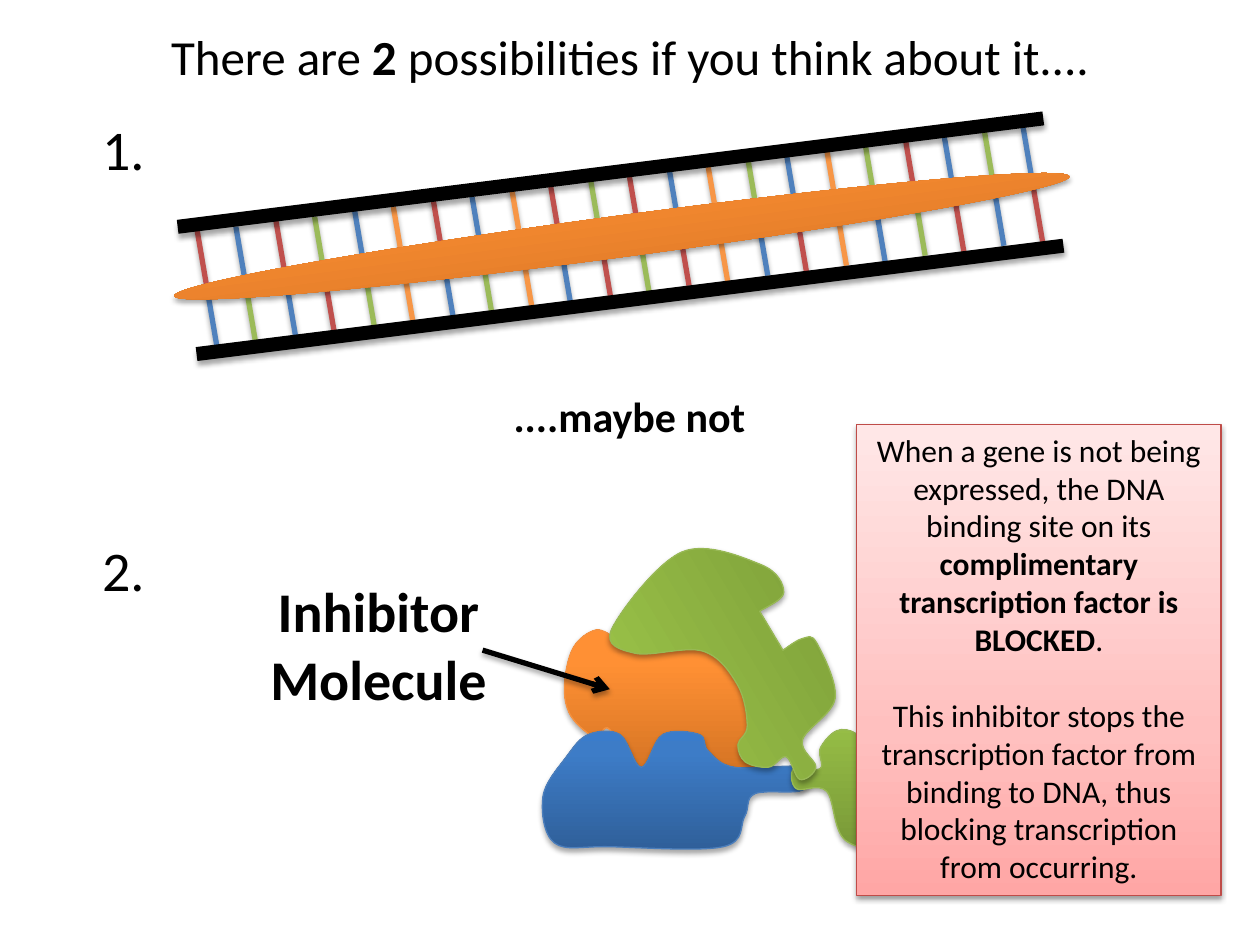
"""Build a slide on how an inhibitor may block a transcription factor."""
import copy
from dataclasses import dataclass

import lxml.etree
import pptx
import pptx.dml.color
import pptx.enum.shapes
import pptx.enum.text
import pptx.oxml.ns
import pptx.util

Inches = pptx.util.Inches
Pt = pptx.util.Pt
qn = pptx.oxml.ns.qn


@dataclass(frozen=True)
class Theme:
    font: str = "Calibri"
    ink: str = "000000"
    title_size: int = 28
    label_size: int = 32
    aside_size: int = 24
    note_size: int = 18
    orange: tuple = ((0, "CC6E20"), (0.8, "FF9034"), (1, "FF9136"))
    blue: tuple = ((0, "2F5F99"), (0.8, "3D7CC7"), (1, "3A7CCB"))
    green: tuple = ((0, "779737"), (0.8, "9BC348"), (1, "9DC746"))
    pink: tuple = ((0, "FFA6A5"), (0.35, "FFC0BF"), (1, "FFE7E7"))
    orange_line: str = "F69240"
    blue_line: str = "4B7EBC"
    green_line: str = "98B955"
    pink_line: str = "BF4C48"


THEME = Theme()
BASE_COLOURS = {"R": "C0504D", "G": "9BBB59", "B": "4F81BD", "O": "F79646"}
UPPER_BASES = "RBRGBORBORGRBOGBOGRBGB"
LOWER_BASES = "BGBRGOBGOBRGROBROBGRBR"

INHIBITOR_BOX = (4.47, 4.99, 1.59, 1.32)
INHIBITOR = [
    (4.84, 5.79), (5.05, 6.2), (5.12, 6.25), (5.31, 5.85), (5.53, 5.94), (5.73, 6.18),
    (5.97, 6.18), (6, 5.99), (6.04, 5.69), (5.87, 5.31), (5.65, 5.09), (5.21, 5.1),
    (5.01, 5.1), (4.9, 5.07), (4.73, 5), (4.55, 5.14), (4.48, 5.44), (4.53, 5.68), (4.72, 5.85)]
FACTOR_BASE_BOX = (4.3, 5.78, 2.19, 0.98)
FACTOR_BASE = [
    (6.39, 6.09), (5.83, 6.09), (5.62, 5.96), (5.55, 5.83), (5.26, 5.83), (5.09, 6.09),
    (4.92, 5.83), (4.67, 5.83), (4.5, 6), (4.31, 6.32), (4.4, 6.69), (4.84, 6.72),
    (5.74, 6.72), (5.91, 6.48), (5.99, 6.3), (6.37, 6.27)]
FACTOR_ARM_BOX = (6.27, 5.31, 2.09, 1.48)
FACTOR_ARM = [
    (6.3, 6.1), (6.51, 6.1), (6.51, 5.94), (6.64, 5.8), (6.79, 5.82), (6.88, 5.96),
    (7.2, 6.06), (7.57, 5.96), (7.83, 5.49), (8.09, 5.43), (8.33, 6.22), (7.92, 6.71),
    (7.64, 6.75), (7.61, 6.51), (7.61, 6.51), (7.25, 6.51), (7.25, 6.51), (7.25, 6.69),
    (7.16, 6.77), (6.71, 6.67), (6.56, 6.28), (6.32, 6.26)]


def rgb(colour):
    """Return a colour object for a hex string."""
    return pptx.dml.color.RGBColor.from_string(colour)


def add_shadow(shape, opacity=35):
    """Give a shape a soft shadow falling straight down."""
    effects = lxml.etree.SubElement(shape._element.spPr, qn("a:effectLst"))
    shadow = lxml.etree.SubElement(
        effects, qn("a:outerShdw"), blurRad=str(Pt(3.1)), dist=str(Pt(1.8)),
        dir="5400000", rotWithShape="0")
    colour = lxml.etree.SubElement(shadow, qn("a:srgbClr"), val=THEME.ink)
    lxml.etree.SubElement(colour, qn("a:alpha"), val=str(opacity * 1000))


def style_shape(shape, stops, outline=None, opacity=35):
    """Apply an upward gradient, an optional thin outline and a shadow."""
    shape.fill.gradient()
    stop_list = shape._element.spPr.find(".//" + qn("a:gsLst"))
    stop_list.append(copy.deepcopy(stop_list[0]))
    for stop, (position, colour) in zip(shape.fill.gradient_stops, stops):
        stop.position = position
        stop.color.rgb = rgb(colour)
    shape.fill.gradient_angle = 90
    if outline:
        shape.line.color.rgb = rgb(outline)
        shape.line.width = Pt(0.75)
    else:
        shape.line.fill.background()
    add_shadow(shape, opacity)


def add_line(shapes, start, end, colour, width, arrow=False):
    """Draw a straight shadowed line, with an arrowhead if asked."""
    line = shapes.add_connector(
        pptx.enum.shapes.MSO_CONNECTOR.STRAIGHT, *map(Inches, start + end))
    line.line.color.rgb = rgb(colour)
    line.line.width = Pt(width)
    if arrow:
        lxml.etree.SubElement(line._element.spPr.find(qn("a:ln")), qn("a:tailEnd"), type="arrow")
    add_shadow(line)


def add_strand(shapes, bases, direction, backbone):
    """Draw one half of the DNA ladder: its rungs, then its backbone."""
    for index, base in enumerate(bases):
        x = 1.64 + index * 6.56 / 21
        y = 2.27 - index // 2 * 0.79 / 10
        end = (x + direction * 0.08, y + direction * 0.47)
        add_line(shapes, (x, y), end, BASE_COLOURS[base], 3)
    add_line(shapes, *backbone, THEME.ink, 8)


def curve_segments(knots):
    """Yield Bézier points of a closed Catmull-Rom curve; doubled knots make corners."""
    for index, start in enumerate(knots):
        before = knots[index - 1]
        end, after = (knots[(index + offset) % len(knots)] for offset in (1, 2))
        if start != end:
            leave = [b + (c - a) / 6 for a, b, c in zip(before, start, end)]
            arrive = [c - (d - b) / 6 for b, c, d in zip(start, end, after)]
            yield leave, arrive, end


def add_blob(slide, knots, box, stops, outline):
    """Draw a smooth closed molecule part through its knots."""
    left, top, width, height = map(Inches, box)
    builder = slide.shapes.build_freeform(left, top)
    builder.add_line_segments([(left + width, top + height)], close=True)
    blob = builder.convert_to_shape()
    contour = blob._element.spPr.find(".//" + qn("a:path"))
    for command in list(contour):
        contour.remove(command)

    def add_command(name, points):
        command = lxml.etree.SubElement(contour, qn(name))
        for x, y in points:
            lxml.etree.SubElement(command, qn("a:pt"), x=str(Inches(x) - left),
                                  y=str(Inches(y) - top))

    add_command("a:moveTo", knots[:1])
    for points in curve_segments(knots):
        add_command("a:cubicBezTo", points)
    add_command("a:close", [])
    style_shape(blob, stops, outline)
    return blob


def write_text(shape, paragraphs, size, bold_parts=()):
    """Fill a shape with centred paragraphs, each a list of text parts."""
    frame = shape.text_frame
    frame.word_wrap = True
    frame.auto_size = pptx.enum.text.MSO_AUTO_SIZE.SHAPE_TO_FIT_TEXT
    frame.vertical_anchor = pptx.enum.text.MSO_ANCHOR.TOP
    for index, parts in enumerate(paragraphs):
        paragraph = frame.add_paragraph() if index else frame.paragraphs[0]
        paragraph.alignment = pptx.enum.text.PP_ALIGN.CENTER
        for part in parts:
            run = paragraph.add_run()
            run.text = part
            run.font.name = THEME.font
            run.font.size = Pt(size)
            run.font.bold = part in bold_parts
            run.font.color.rgb = rgb(THEME.ink)


def add_label(slide, box, text, size, bold=False):
    """Place a centred one-paragraph text box."""
    label = slide.shapes.add_textbox(*map(Inches, box))
    write_text(label, [[text]], size, [text] if bold else ())


def add_title(slide):
    """Move and fill the title placeholder."""
    title = slide.shapes.title
    title.left, title.top, title.width, title.height = map(Inches, (0, 0.16, 10, 0.57))
    write_text(title, [["There are ", "2", " possibilities if you think about it...."]],
               THEME.title_size, ["2"])


def add_note(slide):
    """Draw the pink explanation box."""
    note = slide.shapes.add_shape(
        pptx.enum.shapes.MSO_SHAPE.RECTANGLE, *map(Inches, (6.8, 3.37, 2.89, 3.74)))
    style_shape(note, THEME.pink, THEME.pink_line, opacity=38)
    blocked = "complimentary transcription factor is BLOCKED"
    write_text(note, [
        ["When a gene is not being expressed, the DNA binding site on its ", blocked, "."],
        ["This inhibitor stops the transcription factor from binding to DNA, "
         "thus blocking transcription from occurring."]], THEME.note_size, [blocked])
    note.text_frame.paragraphs[1].space_before = Pt(22)


def main():
    """Build and save the slide."""
    presentation = pptx.Presentation()
    presentation.slide_width, presentation.slide_height = Inches(10), Inches(7.5)
    slide = presentation.slides.add_slide(presentation.slide_layouts[5])
    add_title(slide)
    add_blob(slide, INHIBITOR, INHIBITOR_BOX, THEME.orange, THEME.orange_line)
    add_strand(slide.shapes, LOWER_BASES, 1, ((1.56, 2.81), (8.44, 1.95)))
    upper_strand = slide.shapes.add_group_shape()
    add_strand(upper_strand.shapes, UPPER_BASES, -1, ((8.28, 0.94), (1.41, 1.8)))
    blocker = slide.shapes.add_shape(
        pptx.enum.shapes.MSO_SHAPE.OVAL, *map(Inches, (1.35, 1.71, 7.17, 0.33)))
    blocker.rotation = 352.4
    style_shape(blocker, THEME.orange)
    add_label(slide, (3.12, 3.05, 3.75, 0.5), "....maybe not", THEME.aside_size, bold=True)
    add_blob(slide, FACTOR_BASE, FACTOR_BASE_BOX, THEME.blue, THEME.blue_line)
    add_blob(slide, FACTOR_ARM, FACTOR_ARM_BOX, THEME.green, THEME.green_line)
    for number, top in (("1.", 0.86), ("2.", 4.2)):
        add_label(slide, (0.55, top, 0.86, 0.64), number, THEME.label_size)
    upper_arm = add_blob(slide, FACTOR_ARM, FACTOR_ARM_BOX, THEME.green, THEME.green_line)
    upper_arm.left, upper_arm.top, upper_arm.rotation = Inches(4.74), Inches(4.6), 239.2
    add_label(slide, (1.64, 4.53, 2.73, 1.18), "Inhibitor Molecule", THEME.label_size, bold=True)
    add_line(slide.shapes, (3.83, 5.16), (4.84, 5.47), THEME.ink, 3, arrow=True)
    add_note(slide)
    presentation.save("out.pptx")


if __name__ == "__main__":
    main()
